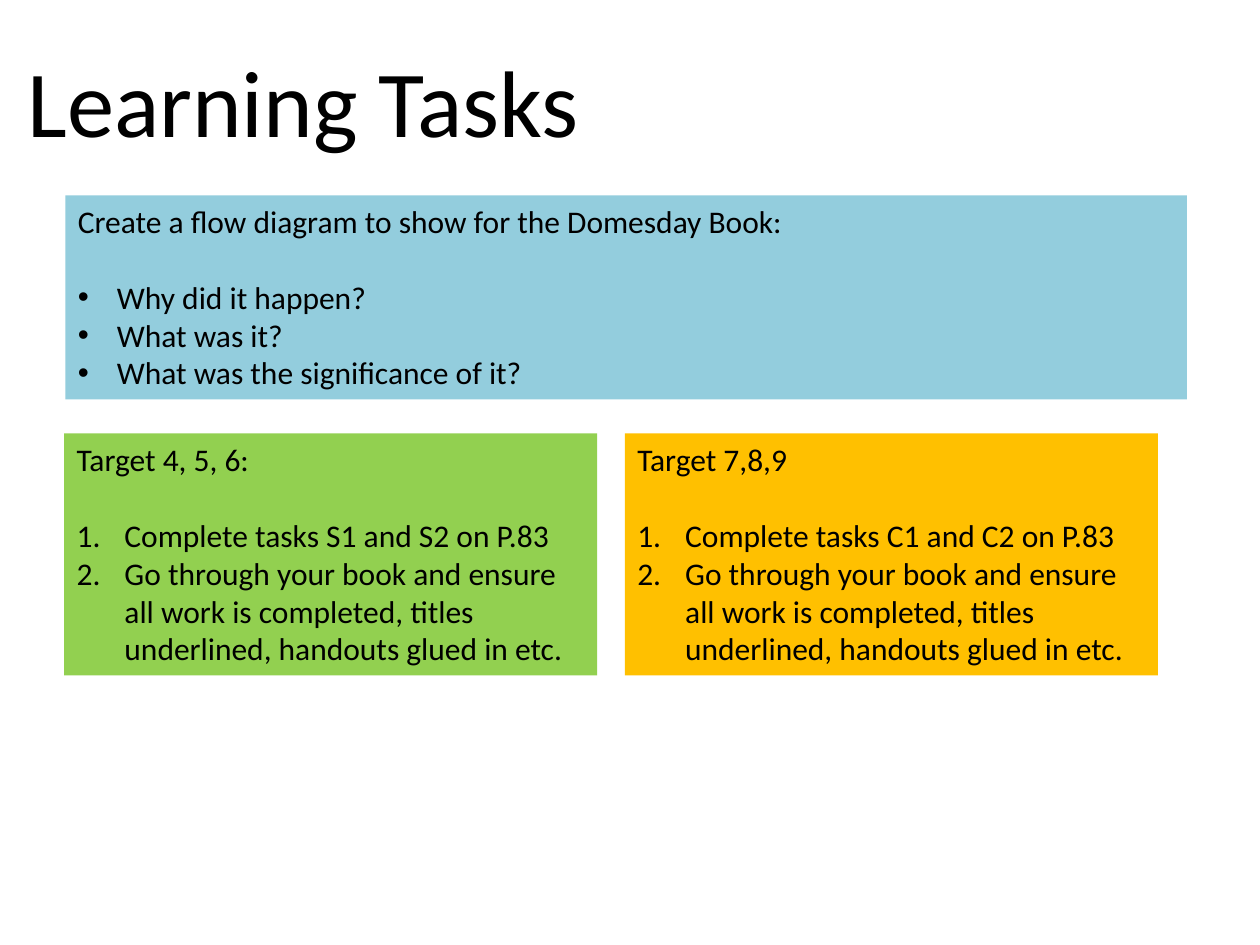
from lxml import etree
from pptx import Presentation
from pptx.dml.color import RGBColor
from pptx.enum.shapes import MSO_SHAPE
from pptx.enum.text import MSO_ANCHOR, MSO_AUTO_SIZE, PP_ALIGN
from pptx.oxml.ns import qn
from pptx.util import Inches, Pt

RECTANGLE = MSO_SHAPE.RECTANGLE
TOP = MSO_ANCHOR.TOP
GROW = MSO_AUTO_SIZE.SHAPE_TO_FIT_TEXT
LEFT = PP_ALIGN.LEFT

COLORS = {"text": "000000", "diagram": "93CDDD", "lower": "92D050", "higher": "FFC000"}
COLUMNS, ROWS = 100, 75
SLIDE_WIDTH, SLIDE_HEIGHT = Inches(10), Inches(7.5)
BODY_SIZE, TITLE_SIZE = 18, 54
HEADING_GAP = Pt(22)
FRAME_FORMAT = {"word_wrap": True, "auto_size": GROW, "vertical_anchor": TOP}

BULLET = {"indent": 0.31, "marks": [("a:buFont", {"typeface": "Arial"}), ("a:buChar", {"char": "•"})]}
NUMBER = {"indent": 0.38, "marks": [("a:buFont", {"typeface": "+mj-lt"}), ("a:buAutoNum", {"type": "arabicPeriod"})]}

TARGET_LEFT, TARGET_PITCH = 5.1, 44.5
TARGETS = [
    ("Target 4, 5, 6:", "S1 and S2", "lower"),
    ("Target 7,8,9", "C1 and C2", "higher"),
]
BOOK_CHECK = "Go through your book and ensure all work is completed, titles underlined, handouts glued in etc."


def apply_format(target, values):
    """Set each named attribute on the target."""
    for name, value in values.items():
        setattr(target, name, value)


def place(column, row, width, height):
    """Turn grid columns and rows into slide lengths."""
    across, down = SLIDE_WIDTH / COLUMNS, SLIDE_HEIGHT / ROWS
    return int(column * across), int(row * down), int(width * across), int(height * down)


def write_line(paragraph, wording, size=BODY_SIZE):
    """Write one left-aligned line in the slide's typeface."""
    paragraph.alignment = LEFT
    run = paragraph.add_run()
    run.text = wording
    apply_format(run.font, {"name": "Calibri", "size": Pt(size)})
    run.font.color.rgb = RGBColor.from_string(COLORS["text"])


def mark_item(paragraph, style):
    """Give a paragraph its hanging indent and list mark."""
    properties = paragraph._p.get_or_add_pPr()
    indent = Inches(style["indent"])
    properties.set("marL", str(indent))
    properties.set("indent", str(-indent))
    for tag, values in style["marks"]:
        etree.SubElement(properties, qn(tag), values)


def add_title(slide, wording, area):
    """Add the slide's title."""
    frame = slide.shapes.add_textbox(*place(*area)).text_frame
    apply_format(frame, FRAME_FORMAT)
    write_line(frame.paragraphs[0], wording, TITLE_SIZE)


def add_task_panel(slide, area, color, heading, tasks, style):
    """Add a coloured panel with a heading and a list of tasks."""
    panel = slide.shapes.add_shape(RECTANGLE, *place(*area))
    panel.shadow.inherit = False
    panel.fill.solid()
    panel.fill.fore_color.rgb = RGBColor.from_string(COLORS[color])
    panel.line.fill.background()
    frame = panel.text_frame
    apply_format(frame, FRAME_FORMAT)
    opening = frame.paragraphs[0]
    write_line(opening, heading)
    opening.space_after = HEADING_GAP
    for task in tasks:
        item = frame.add_paragraph()
        write_line(item, task)
        mark_item(item, style)


def main():
    """Build and save the learning tasks slide."""
    deck = Presentation()
    apply_format(deck, {"slide_width": SLIDE_WIDTH, "slide_height": SLIDE_HEIGHT})
    slide = deck.slides.add_slide(deck.slide_layouts[6])
    questions = ["Why did it happen?", "What was it?", "What was the significance of it?"]
    add_task_panel(slide, (5.2, 15.5, 89, 16.2), "diagram",
                   "Create a flow diagram to show for the Domesday Book:", questions, BULLET)
    for index, (heading, exercises, color) in enumerate(TARGETS):
        area = (TARGET_LEFT + index * TARGET_PITCH, 34.4, 42.3, 19.2)
        tasks = [f"Complete tasks {exercises} on P.83", BOOK_CHECK]
        add_task_panel(slide, area, color, heading, tasks, NUMBER)
    add_title(slide, "Learning Tasks", (1.2, 2.9, 98.4, 10.1))
    deck.save("out.pptx")


if __name__ == "__main__":
    main()
